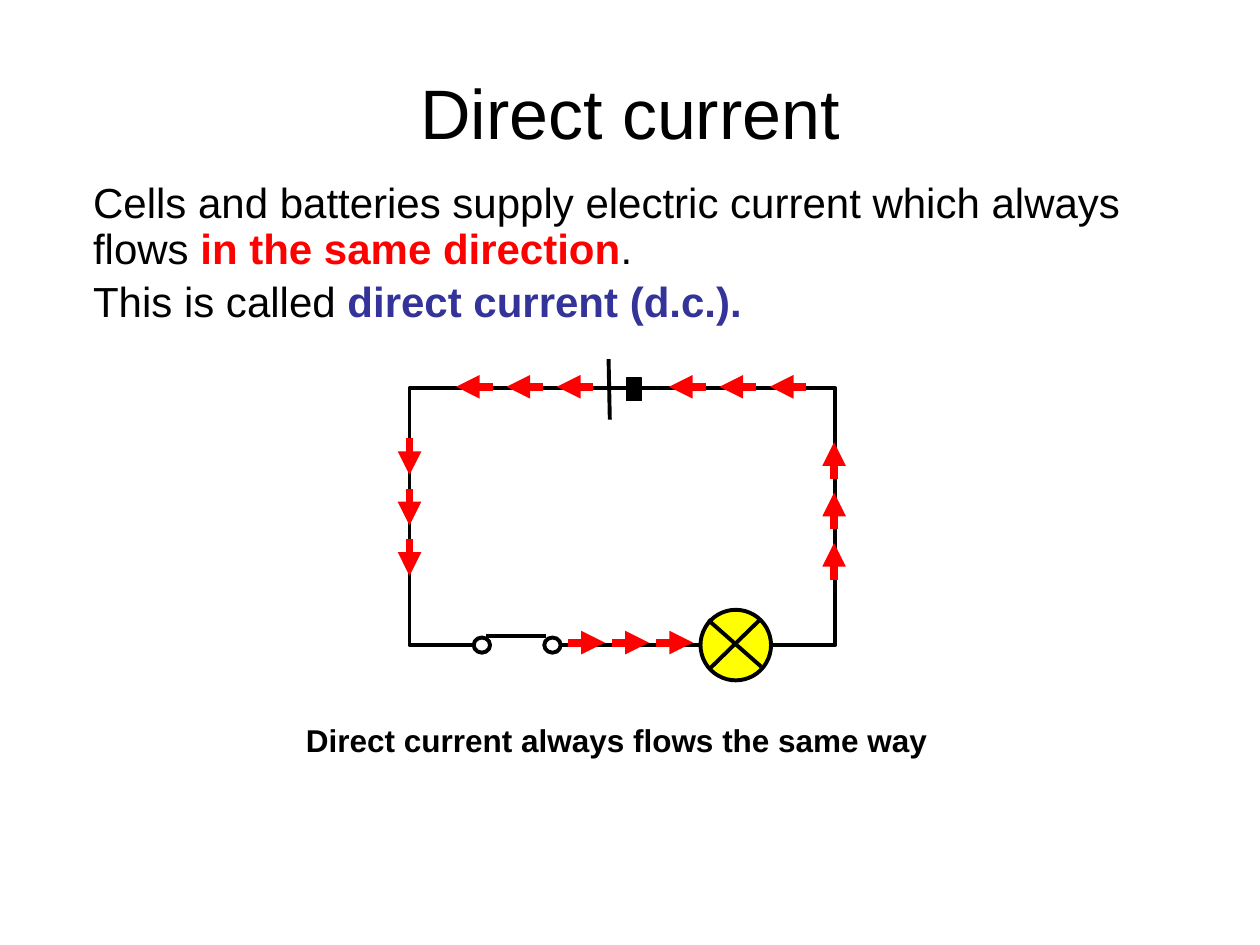
from dataclasses import dataclass

from lxml.etree import SubElement
from pptx import Presentation
from pptx.dml.color import RGBColor
from pptx.enum.shapes import MSO_CONNECTOR, MSO_SHAPE
from pptx.enum.text import MSO_ANCHOR, PP_ALIGN
from pptx.oxml.ns import qn
from pptx.util import Inches, Pt


@dataclass(frozen=True)
class Theme:
    """Colours, type sizes and line widths of the slide."""
    font: str = "Arial"
    black: str = "000000"
    white: str = "FFFFFF"
    red: str = "FF0000"
    blue: str = "333399"
    yellow: str = "FFFF00"
    title: int = 40
    body: int = 24
    label: int = 18
    wire: float = 2.25
    thin: float = 0.75
    flow: float = 4.5


THEME = Theme()


def tint(code):
    """Turn a hex code into a colour."""
    return RGBColor.from_string(code)


def add_frame(slide, left, top, width, height):
    """Add a wrapped text box and return its frame."""
    box = slide.shapes.add_textbox(*map(Inches, (left, top, width, height)))
    box.text_frame.word_wrap = True
    return box.text_frame


def style(run, size, color=THEME.black, bold=False):
    """Set the font of a run."""
    font = run.font
    font.name, font.size, font.bold = THEME.font, Pt(size), bold
    font.color.rgb = tint(color)


def add_title(slide):
    """Add the centred heading."""
    frame = add_frame(slide, 0.5, 0.3, 9, 1.17)
    frame.vertical_anchor = MSO_ANCHOR.MIDDLE
    frame.text = "Direct current"
    line = frame.paragraphs[0]
    line.alignment = PP_ALIGN.CENTER
    style(line.runs[0], THEME.title)


def add_body(slide):
    """Add the two lines of text with their key words."""
    lines = (
        (("Cells and batteries supply electric current which always flows ", THEME.black, False),
         ("in the same direction", THEME.red, True),
         (".", THEME.black, False)),
        (("This is called ", THEME.black, False),
         ("direct current (d.c.).", THEME.blue, True)),
    )
    frame = add_frame(slide, 0.64, 1.4, 9.05, 1.28)
    frame.text = "\n".join("" for _ in lines)
    for line, parts in zip(frame.paragraphs, lines):
        line.line_spacing = 0.9
        line.space_before = Pt(0.2 * THEME.body)
        for text, color, bold in parts:
            run = line.add_run()
            run.text = text
            style(run, THEME.body, color, bold)


def add_label(slide):
    """Add the bold line below the circuit."""
    frame = add_frame(slide, 2.33, 5.67, 5.16, 0.4)
    frame.text = "Direct current always flows the same way"
    style(frame.paragraphs[0].runs[0], THEME.label, bold=True)


def add_form(slide, kind, place, fill=None, width=None):
    """Add a preset shape with an optional fill and black outline."""
    form = slide.shapes.add_shape(kind, *map(Inches, place))
    form.shadow.inherit = False
    if fill:
        form.fill.solid()
        form.fill.fore_color.rgb = tint(fill)
    else:
        form.fill.background()
    if width:
        form.line.color.rgb = tint(THEME.black)
        form.line.width = Pt(width)
    else:
        form.line.fill.background()


def add_line(slide, start, end, color=THEME.black, width=THEME.wire, arrow=False):
    """Add a straight line, with an arrowhead at its end if asked."""
    line = slide.shapes.add_connector(MSO_CONNECTOR.STRAIGHT, *map(Inches, (*start, *end)))
    line.line.color.rgb = tint(color)
    line.line.width = Pt(width)
    if arrow:
        SubElement(line.line._get_or_add_ln(), qn("a:tailEnd"), type="triangle")
    SubElement(line._element.spPr, qn("a:effectLst"))


def add_cell(slide):
    """Add the long and short plates of the cell."""
    add_line(slide, (4.83, 2.85), (4.84, 3.33))
    add_form(slide, MSO_SHAPE.RECTANGLE, (4.97, 3, 0.12, 0.18), THEME.black, THEME.thin)


def add_lamp(slide):
    """Add the lit lamp with its cross."""
    add_form(slide, MSO_SHAPE.OVAL, (5.56, 4.84, 0.56, 0.56), THEME.yellow, THEME.wire)
    add_line(slide, (5.64, 5.3), (6.03, 4.92))
    add_line(slide, (6.04, 5.29), (5.62, 4.92))


def add_switch(slide):
    """Add the closed switch over a gap in the wire."""
    add_form(slide, MSO_SHAPE.RECTANGLE, (3.83, 4.93, 0.55, 0.38), THEME.white)
    for left in (3.76, 4.32):
        add_form(slide, MSO_SHAPE.OVAL, (left, 5.06, 0.13, 0.12), THEME.white, THEME.wire)
    add_line(slide, (4.33, 5.05), (3.86, 5.05))


def add_flow(slide, x, y, way, step):
    """Add three red arrows in a row, each pointing one way."""
    size, (across, down) = 0.29, way
    for count in range(3):
        start = x + count * step * across, y + count * step * down
        end = start[0] + size * across, start[1] + size * down
        add_line(slide, start, end, THEME.red, THEME.flow, True)


def main():
    """Build the slide and save it."""
    deck = Presentation()
    deck.slide_width, deck.slide_height = Inches(10), Inches(7.5)
    slide = deck.slides.add_slide(deck.slide_layouts[6])
    add_title(slide)
    add_body(slide)
    add_form(slide, MSO_SHAPE.RECTANGLE, (3.25, 3.08, 3.38, 2.04), width=THEME.wire)
    add_cell(slide)
    add_lamp(slide)
    add_switch(slide)
    left, right, up, down = (-1, 0), (1, 0), (0, -1), (0, 1)
    for x, y, way, step in (
        (4.71, 3.07, left, 0.4),
        (6.4, 3.07, left, 0.4),
        (3.25, 3.48, down, 0.4),
        (4.51, 5.1, right, 0.35),
        (6.62, 4.6, up, 0.4),
    ):
        add_flow(slide, x, y, way, step)
    add_label(slide)
    deck.save("out.pptx")


if __name__ == "__main__":
    main()
